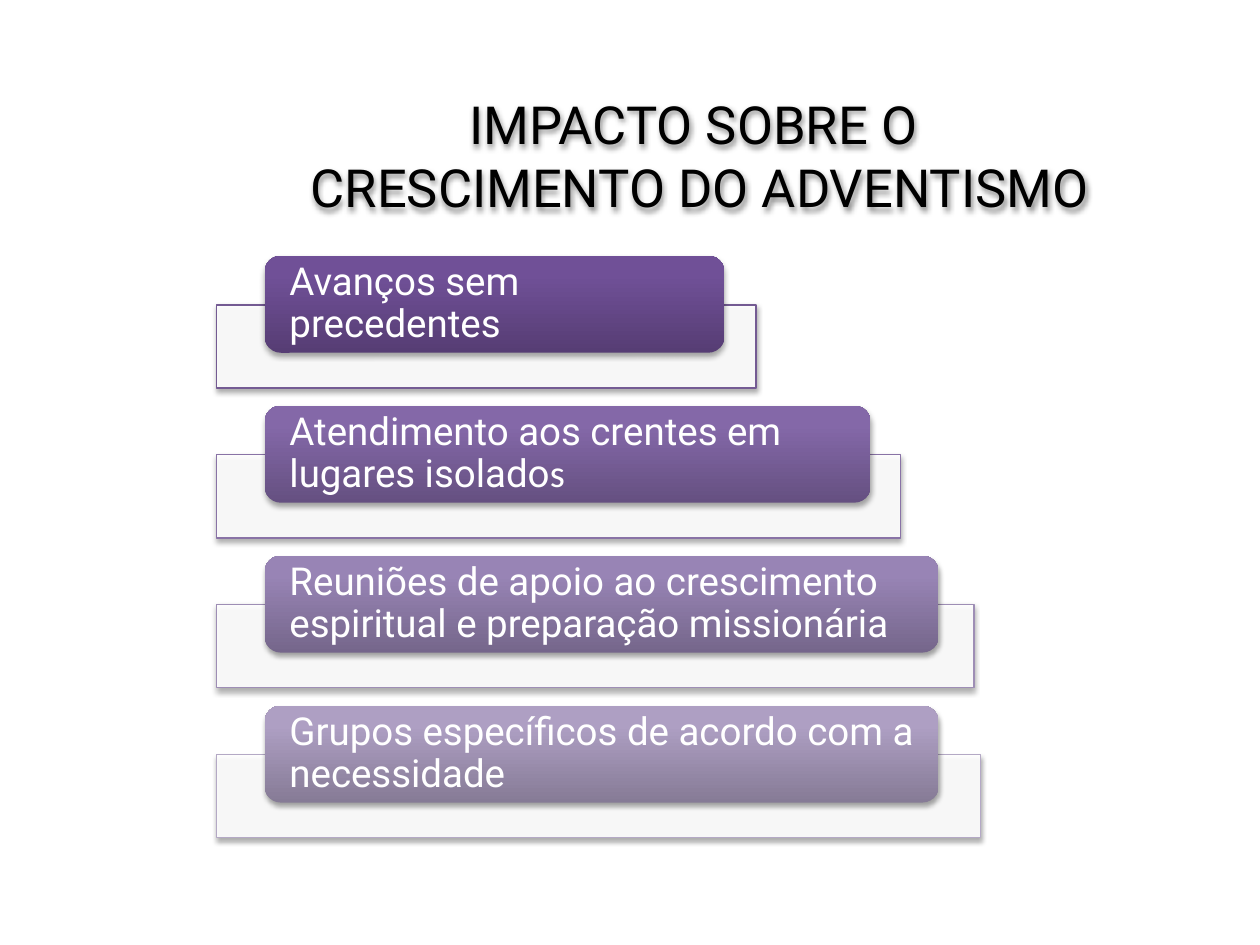
from lxml import etree
from copy import deepcopy
from pptx import Presentation
from pptx.dml.color import RGBColor
from pptx.enum.shapes import MSO_SHAPE
from pptx.enum.text import MSO_ANCHOR, PP_ALIGN
from pptx.oxml.ns import qn
from pptx.util import Inches, Pt

FONT = "Roboto"
TITLE = ["IMPACTO SOBRE O ", "CRESCIMENTO DO ADVENTISMO"]

# Per item: runs with their font, panel width, label width, panel line, gradient from bottom to top
ITEMS = [
    ([("Avanços sem precedentes", FONT)],
     4.28, 3.65, "745B93", ["563D74", "705097", "704F99"]),
    ([("Atendimento aos crentes em lugares isolado", FONT), ("s", "Calibri")],
     5.43, 4.81, "8973A6", ["655081", "8468A8", "8467AA"]),
    ([("Reuniões de apoio ao crescimento espiritual e preparação missionária", FONT)],
     6.01, 5.35, "9E8EB5", ["75668B", "9884B5", "9984B7"]),
    ([("Grupos específicos de acordo com a necessidade", FONT)],
     6.06, 5.35, "B4A9C5", ["867B96", "AE9FC3", "AE9FC4"]),
]


def color(hex_code):
    return RGBColor.from_string(hex_code)


def set_alpha(color_element, percent):
    etree.SubElement(color_element, qn("a:alpha")).set("val", str(percent * 1000))


def add_shadow(shape, blur=3.1, distance=1.8, opacity=35):
    """Soft black shadow falling straight down."""
    shape.shadow.inherit = False
    effects = shape._element.spPr.find(qn("a:effectLst"))
    outer = etree.SubElement(effects, qn("a:outerShdw"), blurRad=str(Pt(blur)),
                             dist=str(Pt(distance)), dir="5400000", rotWithShape="0")
    black = etree.SubElement(outer, qn("a:srgbClr"), val="000000")
    set_alpha(black, opacity)


def fill_gradient(shape, hex_codes):
    shape.fill.gradient()
    shape.fill.gradient_angle = 90
    stop_list = shape._element.spPr.find(".//" + qn("a:gsLst"))
    stop_list.append(deepcopy(stop_list[-1]))
    for stop, position, hex_code in zip(shape.fill.gradient_stops, (0, 0.8, 1), hex_codes):
        stop.position = position
        stop.color.rgb = color(hex_code)


def add_run(paragraph, text, size, hex_code, font=FONT):
    run = paragraph.add_run()
    run.text = text
    run.font.name = font
    run.font.size = Pt(size)
    run.font.color.rgb = color(hex_code)


def add_title(slide, left, top, width, height):
    title = slide.shapes.add_textbox(left, top, width, height)
    add_shadow(title, blur=3, distance=2, opacity=45)
    frame = title.text_frame
    frame.word_wrap = True
    for index, line in enumerate(TITLE):
        paragraph = frame.add_paragraph() if index else frame.paragraphs[0]
        paragraph.alignment = PP_ALIGN.CENTER
        add_run(paragraph, line, 30, "000000")


def add_item(slide, left, top, item):
    runs, panel_width, label_width, line_color, gradient = item

    # Pale panel behind the label
    panel = slide.shapes.add_shape(MSO_SHAPE.RECTANGLE, left, top + Inches(0.39),
                                   Inches(panel_width), Inches(0.66))
    panel.fill.solid()
    panel.fill.fore_color.rgb = color("FFFFFF")
    set_alpha(panel._element.spPr.find(qn("a:solidFill"))[0], 90)
    panel.line.color.rgb = color(line_color)
    panel.line.width = Pt(0.75)
    add_shadow(panel)

    # Rounded label with the text
    label = slide.shapes.add_shape(MSO_SHAPE.ROUNDED_RECTANGLE, left + Inches(0.38), top,
                                   Inches(label_width), Inches(0.77))
    fill_gradient(label, gradient)
    label.line.fill.background()
    add_shadow(label)
    frame = label.text_frame
    frame.word_wrap = True
    frame.vertical_anchor = MSO_ANCHOR.MIDDLE
    frame.margin_left = frame.margin_right = Inches(0.16)
    frame.margin_top = frame.margin_bottom = 0
    paragraph = frame.paragraphs[0]
    paragraph.alignment = PP_ALIGN.LEFT
    paragraph.line_spacing = 0.9
    for text, font in runs:
        add_run(paragraph, text, 22, "FFFFFF", font)


def add_list(slide, left, top, step):
    for index, item in enumerate(ITEMS):
        add_item(slide, left, top + index * step, item)


def main():
    presentation = Presentation()
    presentation.slide_width = Inches(10)
    presentation.slide_height = Inches(7.5)
    slide = presentation.slides.add_slide(presentation.slide_layouts[6])
    add_title(slide, Inches(1.46), Inches(0.68), Inches(8.19), Inches(1.11))
    add_list(slide, Inches(1.72), Inches(2.03), Inches(1.19))
    presentation.save("out.pptx")


if __name__ == "__main__":
    main()
